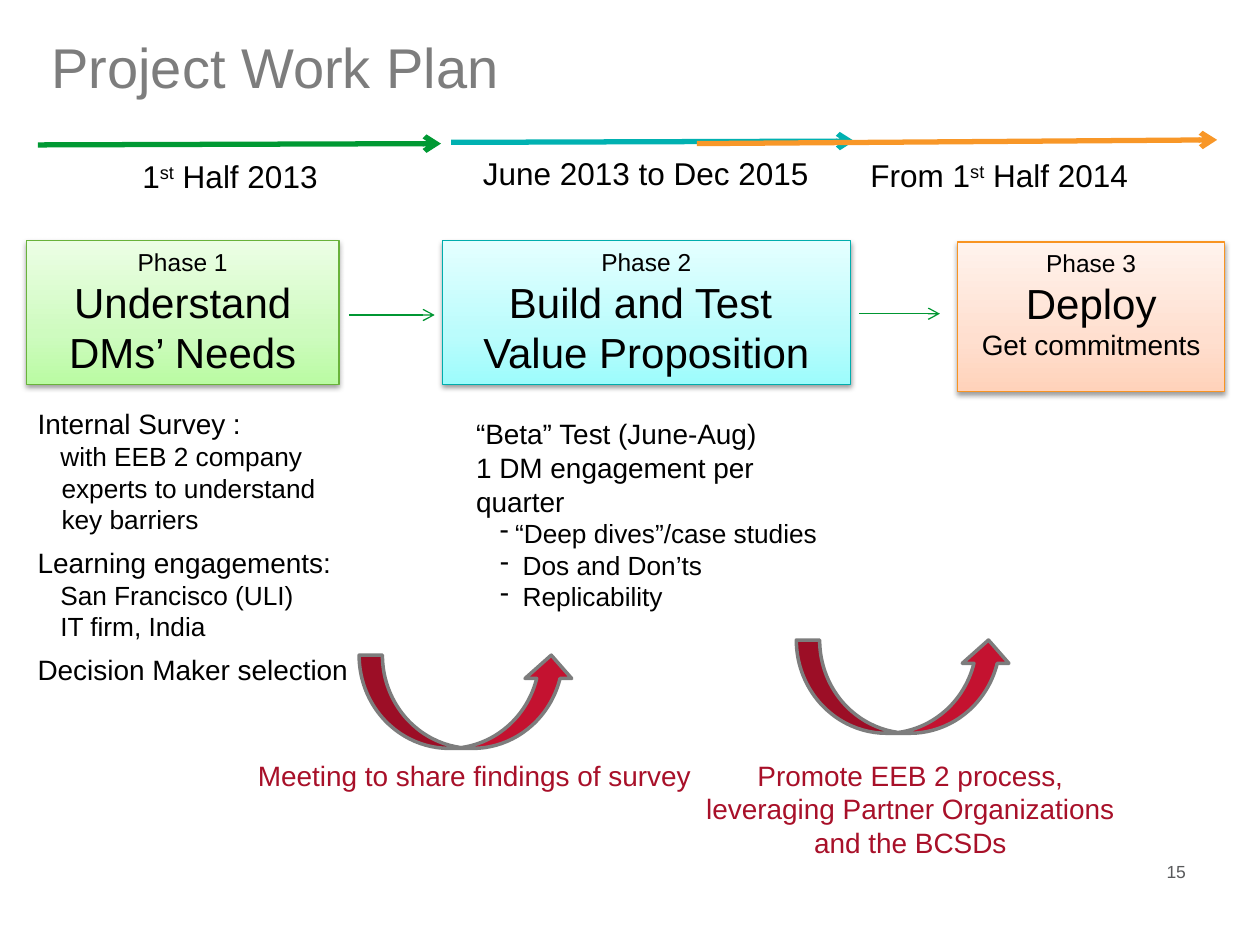
"""Build the Project Work Plan slide on a grid of 100 columns by 75 rows."""
from dataclasses import dataclass
from typing import NamedTuple

from lxml.etree import SubElement
from pptx import Presentation
from pptx.dml.color import RGBColor
from pptx.enum.shapes import MSO_CONNECTOR as Link, MSO_SHAPE as Preset
from pptx.enum.text import MSO_ANCHOR as Anchor, PP_ALIGN as Align
from pptx.oxml.ns import qn
from pptx.util import Inches, Pt

COLORS = {
    "title": "7D7D7D", "number": "58595B", "text": "000000", "outcome": "A81029",
    "curve": "C41230", "curve_edge": "7D7D7D", "step": "009632",
    "first": "009933", "second": "00B1B1", "third": "F89728",
    "phase1": "69B23B", "phase2": "00ADAD", "phase3": "F89422",
}
GRADIENTS = {
    "phase1": ("BAFBA3", "CEFBBF", "ECFEE5"),
    "phase2": ("9DFCFC", "BBFCFC", "E4FFFF"),
    "phase3": ("FFD2BA", "FFDFCF", "FFF3ED"),
}
STOPS = (0, 35000, 100000)
SHADOW = {"blurRad": "39370", "dist": "20320", "dir": "5400000", "rotWithShape": "0"}
COLUMNS, ROWS = 100, 75
WIDTH, HEIGHT = Inches(10), Inches(7.5)


class Area(NamedTuple):
    col: float
    row: float
    cols: float
    rows: float

    def lengths(self) -> tuple[int, ...]:
        shares = (self.col / COLUMNS * WIDTH, self.row / ROWS * HEIGHT,
                  self.cols / COLUMNS * WIDTH, self.rows / ROWS * HEIGHT)
        return tuple(round(share) for share in shares)


@dataclass
class Line:
    text: str
    size: float = 16
    color: str = "text"
    align: Align = Align.LEFT
    margin: float = 0
    indent: float = 0
    bullet: str = ""
    before: float = 0
    raised: str = ""
    rest: str = ""


@dataclass
class Block:
    area: Area
    lines: list[Line]
    anchor: Anchor = Anchor.TOP


@dataclass
class Phase:
    key: str
    area: Area
    lines: list[Line]


class Arrow(NamedTuple):
    start: tuple[float, float]
    end: tuple[float, float]
    color: str
    width: float


def centered(text: str, size: float = 16, **formats) -> Line:
    return Line(text, size, align=Align.CENTER, **formats)


def detail(text: str) -> Line:
    return Line(text, 15, margin=0.19, indent=-0.01)


def dash(text: str, margin: float = 0.37) -> Line:
    return Line(text, 15, margin=margin, indent=0.19 - margin, bullet="-")


def rgb(key: str) -> RGBColor:
    return RGBColor.from_string(COLORS[key])


def write(frame, lines: list[Line], anchor: Anchor = Anchor.TOP) -> None:
    frame.word_wrap = True
    frame.vertical_anchor = anchor
    for index, line in enumerate(lines):
        paragraph = frame.add_paragraph() if index else frame.paragraphs[0]
        paragraph.alignment = line.align
        if line.before:
            paragraph.space_before = Pt(line.before)
        properties = paragraph._p.get_or_add_pPr()
        if line.margin:
            properties.set("marL", str(Inches(line.margin)))
            properties.set("indent", str(Inches(line.indent)))
        if line.bullet:
            SubElement(properties, qn("a:buChar"), char=line.bullet)
        for part, baseline in ((line.text, 0), (line.raised, 30000), (line.rest, 0)):
            if not part:
                continue
            run = paragraph.add_run()
            run.text = part
            for name, value in {"name": "Arial", "size": Pt(line.size)}.items():
                setattr(run.font, name, value)
            run.font.color.rgb = rgb(line.color)
            if baseline:
                run._r.get_or_add_rPr().set("baseline", str(baseline))


def draw_block(slide, block: Block) -> None:
    box = slide.shapes.add_textbox(*block.area.lengths())
    write(box.text_frame, block.lines, block.anchor)


def draw_phase(slide, phase: Phase) -> None:
    card = slide.shapes.add_shape(Preset.RECTANGLE, *phase.area.lengths())
    card.fill.gradient()
    card.fill.gradient_angle = 90
    stops = card._element.spPr.find(".//" + qn("a:gsLst"))
    for stop in list(stops):
        stops.remove(stop)
    for position, color in zip(STOPS, GRADIENTS[phase.key]):
        stop = SubElement(stops, qn("a:gs"), pos=str(position))
        SubElement(stop, qn("a:srgbClr"), val=color)
    card.line.color.rgb = rgb(phase.key)
    card.line.width = Pt(0.75)
    card.shadow.inherit = False
    effects = card._element.spPr.find(qn("a:effectLst"))
    shade = SubElement(SubElement(effects, qn("a:outerShdw"), SHADOW),
                       qn("a:srgbClr"), val="000000")
    SubElement(shade, qn("a:alpha"), val="38000")
    write(card.text_frame, phase.lines)


def draw_arrow(slide, arrow: Arrow) -> None:
    ends = Area(*arrow.start, *arrow.end).lengths()
    line = slide.shapes.add_connector(Link.STRAIGHT, *ends)
    line.line.color.rgb = rgb(arrow.color)
    line.line.width = Pt(arrow.width)
    SubElement(line.line._get_or_add_ln(), qn("a:tailEnd"), type="arrow")
    SubElement(line._element.spPr, qn("a:effectLst"))


def draw_curve(slide, col: float, row: float) -> None:
    curve = slide.shapes.add_shape(Preset.CURVED_UP_ARROW,
                                   *Area(col, row, 17.1, 7.4).lengths())
    curve.fill.solid()
    curve.fill.fore_color.rgb = rgb("curve")
    curve.line.color.rgb = rgb("curve_edge")
    curve.line.width = Pt(2)
    curve.shadow.inherit = False


PHASES = [
    Phase("phase1", Area(2.1, 19.1, 24.8, 11.4),
          [centered("Phase 1", 14), centered("Understand", 24),
           centered("DMs’ Needs", 24)]),
    Phase("phase2", Area(35.1, 19.1, 32.4, 11.4),
          [centered("Phase 2", 14), centered("Build and Test ", 24),
           centered("Value Proposition", 24)]),
    Phase("phase3", Area(76, 19.2, 21.2, 11.9),
          [centered("Phase 3", 14), centered("Deploy", 24),
           centered("Get commitments")]),
]
ARROWS = [
    Arrow((27.7, 25), (34.5, 25), "step", 0.75),
    Arrow((68.2, 24.9), (74.6, 24.9), "step", 0.75),
    Arrow((3, 11.5), (35, 11.4), "first", 3),
    Arrow((35.8, 11.3), (67.8, 11.2), "second", 3),
    Arrow((55.3, 11.4), (96.6, 11.1), "third", 3),
]
CURVES = [(63.2, 50.8), (28.5, 52)]
BLOCKS = [
    Block(Area(76.2, 67.8, 18.9, 2.7),
          [Line("15", 10, "number", Align.RIGHT)], Anchor.MIDDLE),
    Block(Area(3.1, 1.8, 79.9, 6.9),
          [Line("Project Work Plan", 32, "title")], Anchor.MIDDLE),
    Block(Area(2, 31.8, 27.2, 23.4), [
        Line("Internal Survey :"),
        detail("with EEB 2 company experts to understand key barriers"),
        Line("Learning engagements:", before=6),
        detail("San Francisco (ULI)"), detail("IT firm, India"),
        Line("Decision Maker selection", before=6)]),
    Block(Area(36.8, 32.6, 29.9, 16.7), [
        Line("“Beta” Test (June-Aug)"), Line("1 DM engagement per quarter"),
        dash("“Deep dives”/case studies", 0.31),
        dash("Dos and Don’ts"), dash("Replicability")]),
    Block(Area(8.8, 12, 18.9, 4),
          [centered("1", 18, raised="st", rest=" Half 2013")]),
    Block(Area(35.7, 11.7, 31.1, 4), [centered("June 2013 to Dec 2015", 18)]),
    Block(Area(68.1, 11.9, 22.7, 4),
          [Line("From 1", 18, raised="st", rest=" Half 2014")]),
    Block(Area(54, 59.7, 36.5, 9.1),
          [centered("Promote EEB 2 process, leveraging Partner Organizations "
                    "and the BCSDs", color="outcome")]),
    Block(Area(19.4, 59.7, 36.5, 6.4),
          [centered("Meeting to share findings of survey", color="outcome")]),
]


def main() -> None:
    deck = Presentation()
    deck.slide_width, deck.slide_height = WIDTH, HEIGHT
    slide = deck.slides.add_slide(deck.slide_layouts[6])
    for phase in PHASES:
        draw_phase(slide, phase)
    for arrow in ARROWS:
        draw_arrow(slide, arrow)
    for col, row in CURVES:
        draw_curve(slide, col, row)
    for block in BLOCKS:
        draw_block(slide, block)
    deck.save("out.pptx")


if __name__ == "__main__":
    main()
